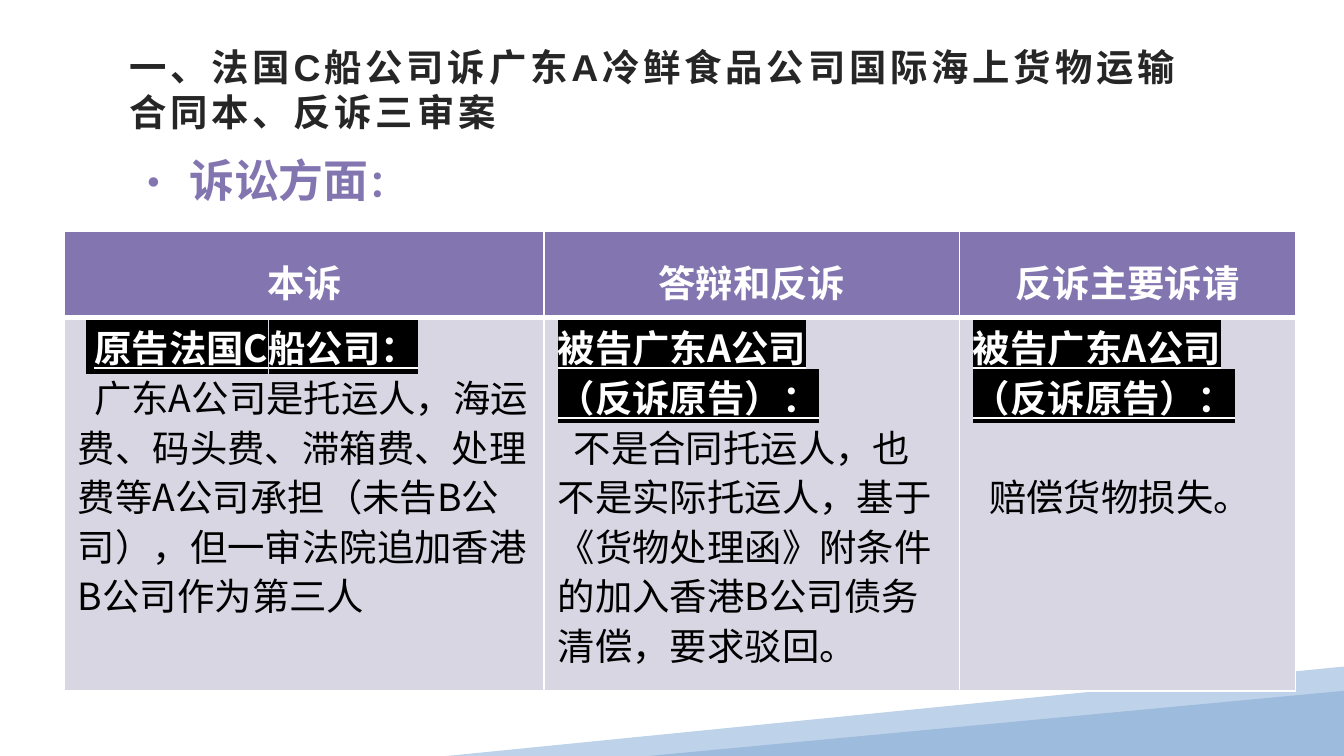
from lxml.etree import SubElement
from pptx import Presentation
from pptx.dml.color import RGBColor
from pptx.enum.shapes import MSO_SHAPE
from pptx.enum.text import MSO_ANCHOR, MSO_AUTO_SIZE, PP_ALIGN
from pptx.oxml.ns import qn
from pptx.util import Inches, Pt

WHITE = RGBColor(0xFF, 0xFF, 0xFF)
BLACK = RGBColor(0x00, 0x00, 0x00)
DARK_GREY = RGBColor(0x26, 0x26, 0x26)
PURPLE = RGBColor(0x83, 0x76, 0xB0)
LAVENDER = RGBColor(0xD9, 0xD6, 0xE4)
PALE_BLUE = RGBColor(0xBE, 0xD2, 0xE9)
MID_BLUE = RGBColor(0x9D, 0xBC, 0xDD)

LATIN = "Arial"
CHINESE = "Noto Sans CJK SC"
HEADING = {"name": LATIN, "size": Pt(20), "bold": True}
PARTY = {"name": CHINESE, "size": Pt(20), "bold": True, "underline": True}
CLAIM = {"name": CHINESE, "size": Pt(20), "bold": False}
LINE_HEIGHT = Pt(26.6)
SPACE_WIDTH = 0.06

TITLE_LINES = ["一、法国C船公司诉广东A冷鲜食品公司国际海上货物运输", "合同本、反诉三审案"]
COLUMN_WIDTHS = [3.57, 3.09, 2.5]
ROW_HEIGHTS = [0.64, 2.78]
HEADERS = ["本诉", "答辩和反诉", "反诉主要诉请"]
DEFENDANT = ["被告广东A公司", "（反诉原告）："]
# Party lines, claim, gap before the claim
CLAIMS = [
    (["原告法国C船公司："],
     "广东A公司是托运人，海运费、码头费、滞箱费、处理费等A公司承担（未告B公司），"
     "但一审法院追加香港B公司作为第三人", Pt(0)),
    (DEFENDANT,
     "不是合同托运人，也不是实际托运人，基于《货物处理函》附条件的加入香港B公司债务清偿，要求驳回。",
     Pt(0)),
    (DEFENDANT, "赔偿货物损失。", LINE_HEIGHT),
]


def format_attributes(target, values):
    for name, value in values.items():
        setattr(target, name, value)


def add_run(paragraph, text, style, color, highlight=None, east_asian=CHINESE):
    run = paragraph.add_run()
    run.text = text
    format_attributes(run.font, style)
    run.font.color.rgb = color
    properties = run._r.get_or_add_rPr()
    latin = properties.find(qn("a:latin"))
    latin.addnext(SubElement(properties, qn("a:ea"), typeface=east_asian))
    if highlight is not None:
        mark = SubElement(properties, qn("a:highlight"))
        SubElement(mark, qn("a:srgbClr"), val=str(highlight))
        latin.addprevious(mark)
    return run


def set_indent(paragraph, first_line, left=0):
    properties = paragraph._p.get_or_add_pPr()
    properties.set("marL", str(Inches(left)))
    properties.set("indent", str(Inches(first_line)))
    return properties


def fill_plain(shape, color):
    shape.shadow.inherit = False
    shape.fill.solid()
    shape.fill.fore_color.rgb = color
    shape.line.fill.background()


def add_corner_waves(slide):
    builder = slide.shapes.build_freeform(Inches(10), Inches(4.96))
    corners = [(10, 5.58), (6.73, 5.63), (3.28, 5.63)]
    builder.add_line_segments([(Inches(x), Inches(y)) for x, y in corners])
    fill_plain(builder.convert_to_shape(), PALE_BLUE)
    wedge = slide.shapes.add_shape(
        MSO_SHAPE.ISOSCELES_TRIANGLE, Inches(4.77), Inches(5.14), Inches(5.23), Inches(0.49))
    wedge.adjustments[0] = 1
    fill_plain(wedge, MID_BLUE)


def fill_title(slide):
    title = slide.shapes.title
    format_attributes(title, {"left": Inches(0.85), "top": Inches(0.3),
                              "width": Inches(8.53), "height": Inches(0.72)})
    frame = title.text_frame
    format_attributes(frame, {
        "margin_left": Inches(0.11), "margin_right": Inches(0.08),
        "margin_top": Inches(0.04), "margin_bottom": Inches(0.04),
        "word_wrap": True, "auto_size": MSO_AUTO_SIZE.NONE,
        "vertical_anchor": MSO_ANCHOR.MIDDLE})
    paragraph = frame.paragraphs[0]
    paragraph.alignment = PP_ALIGN.LEFT
    for index, line in enumerate(TITLE_LINES):
        if index:
            paragraph.add_line_break()
        run = add_run(paragraph, line, HEADING, DARK_GREY, east_asian=LATIN)
        run._r.get_or_add_rPr().set("spc", "200")


def add_subheading(slide):
    box = slide.shapes.add_textbox(Inches(0.74), Inches(1.09), Inches(2.39), Inches(0.5))
    box.text_frame.word_wrap = True
    paragraph = box.text_frame.paragraphs[0]
    properties = set_indent(paragraph, -0.43, left=0.57)
    SubElement(properties, qn("a:buFont"), typeface=CHINESE)
    SubElement(properties, qn("a:buChar"), char="·")
    style = {"name": CHINESE, "bold": True}
    add_run(paragraph, "诉讼方面", {**style, "size": Pt(24)}, PURPLE)
    add_run(paragraph, "：", {**style, "size": Pt(20)}, PURPLE)


def set_borders(cell, **widths):
    """Draw white borders; widths are points keyed by side: L, R, T, B."""
    properties = cell._tc.get_or_add_tcPr()
    for position, (side, width) in enumerate(widths.items()):
        line = SubElement(properties, qn(f"a:ln{side}"), w=str(Pt(width)))
        fill = SubElement(line, qn("a:solidFill"))
        SubElement(fill, qn("a:srgbClr"), val=str(WHITE))
        properties.insert(position, line)


def fill_cell(cell, color):
    cell.fill.solid()
    cell.fill.fore_color.rgb = color


def fill_header(cell, text):
    fill_cell(cell, PURPLE)
    set_borders(cell, L=1, R=1, T=1, B=3)
    paragraph = cell.text_frame.paragraphs[0]
    format_attributes(paragraph, {"alignment": PP_ALIGN.CENTER, "line_spacing": 1.3})
    add_run(paragraph, text, HEADING, WHITE)


def fill_claim(cell, parties, claim, gap, is_plaintiff):
    fill_cell(cell, LAVENDER)
    set_borders(cell, L=1, R=1, T=3, B=1)
    frame = cell.text_frame
    paragraph = frame.paragraphs[0]
    if is_plaintiff:
        set_indent(paragraph, SPACE_WIDTH)
        add_run(paragraph, " ", CLAIM, WHITE, BLACK)
    for party in parties:
        add_run(paragraph, party, PARTY, WHITE, BLACK)
        paragraph.line_spacing = LINE_HEIGHT
        paragraph = frame.add_paragraph()
    format_attributes(paragraph, {"line_spacing": LINE_HEIGHT, "space_before": gap})
    set_indent(paragraph, 2 * SPACE_WIDTH)
    add_run(paragraph, claim, CLAIM, BLACK)


def add_claims_table(slide):
    table = slide.shapes.add_table(
        len(ROW_HEIGHTS), len(COLUMN_WIDTHS), Inches(0.48), Inches(1.72),
        Inches(sum(COLUMN_WIDTHS)), Inches(sum(ROW_HEIGHTS))).table
    table.horz_banding = False
    for column, width in zip(table.columns, COLUMN_WIDTHS):
        column.width = Inches(width)
    for row, height in zip(table.rows, ROW_HEIGHTS):
        row.height = Inches(height)
    for index, (header, claim) in enumerate(zip(HEADERS, CLAIMS)):
        fill_header(table.cell(0, index), header)
        fill_claim(table.cell(1, index), *claim, is_plaintiff=index == 0)


def main():
    presentation = Presentation()
    presentation.slide_width = Inches(10)
    presentation.slide_height = Inches(10 * 9 / 16)
    slide = presentation.slides.add_slide(presentation.slide_layouts[5])
    add_corner_waves(slide)
    fill_title(slide)
    add_claims_table(slide)
    add_subheading(slide)
    presentation.save("out.pptx")


if __name__ == "__main__":
    main()
